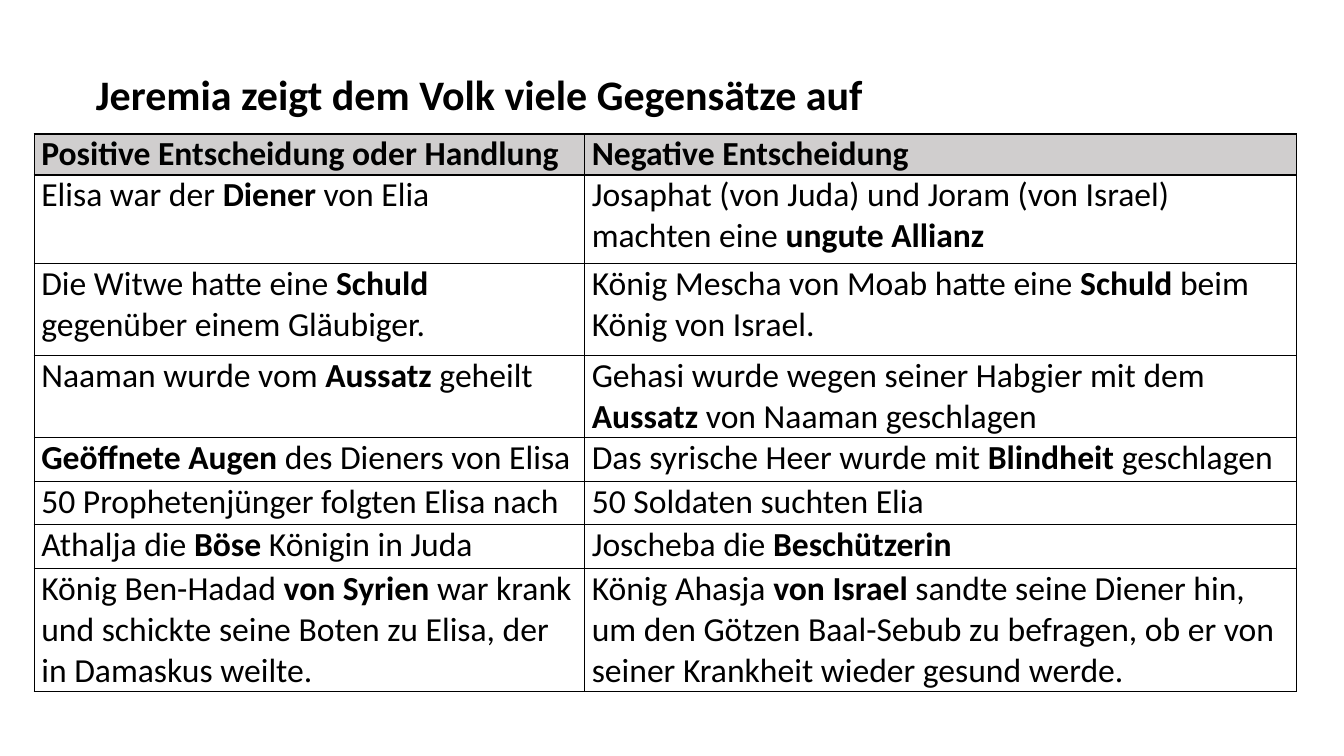
import pptx
import pptx.util
import pptx.dml.color
import pptx.enum.text
import pptx.oxml
import pptx.oxml.ns
from lxml import etree

Inches, Pt = pptx.util.Inches, pptx.util.Pt
COLORS = {"text": "000000", "border": "000000", "header": "D0CECE"}
FONT = "Calibri"
TITLE = "Jeremia zeigt dem Volk viele Gegensätze auf"
COLUMN_WIDTHS = [5.46, 7.06]
ROW_HEIGHTS = [0.34, 0.88, 0.91, 0.68, 0.44, 0.42, 0.44, 1.02]
# Asterisks enclose bold words.
ROWS = [
    ("*Positive Entscheidung oder Handlung*", "*Negative Entscheidung*"),
    ("Elisa war der *Diener* von Elia",
     "Josaphat (von Juda) und Joram (von Israel) machten eine *ungute Allianz*"),
    ("Die Witwe hatte eine *Schuld* gegenüber einem Gläubiger.",
     "König Mescha von Moab hatte eine *Schuld* beim König von Israel."),
    ("Naaman wurde vom *Aussatz* geheilt",
     "Gehasi wurde wegen seiner Habgier mit dem *Aussatz* von Naaman geschlagen"),
    ("*Geöffnete Augen* des Dieners von Elisa",
     "Das syrische Heer wurde mit *Blindheit* geschlagen"),
    ("50 Prophetenjünger folgten Elisa nach", "50 Soldaten suchten Elia"),
    ("Athalja die *Böse* Königin in Juda", "Joscheba die *Beschützerin*"),
    ("König Ben-Hadad *von Syrien *war krank und schickte seine Boten zu Elisa, "
     "der in Damaskus weilte.",
     "König Ahasja *von Israel *sandte seine Diener hin, um den Götzen Baal-Sebub "
     "zu befragen, ob er von seiner Krankheit wieder gesund werde."),
]


def color(name):
    return pptx.dml.color.RGBColor.from_string(COLORS[name])


def set_font(paragraph, size):
    font = paragraph.font
    font.name, font.size = FONT, Pt(size)
    font.color.rgb = color("text")


def add_borders(cell):
    properties = cell._tc.get_or_add_tcPr()
    for index, side in enumerate(("lnL", "lnR", "lnT", "lnB")):
        line = etree.Element(pptx.oxml.ns.qn(f"a:{side}"), w=str(Pt(1)))
        fill = etree.SubElement(line, pptx.oxml.ns.qn("a:solidFill"))
        etree.SubElement(fill, pptx.oxml.ns.qn("a:srgbClr"), val=COLORS["border"])
        properties.insert(index, line)


def fill_cell(cell, marked_text, is_header):
    cell.margin_left = cell.margin_right = Inches(0.07)
    cell.margin_top = cell.margin_bottom = 0
    if is_header:
        cell.fill.solid()
        cell.fill.fore_color.rgb = color("header")
    else:
        cell.fill.background()
    add_borders(cell)
    paragraph = cell.text_frame.paragraphs[0]
    set_font(paragraph, 24)
    for index, part in enumerate(marked_text.split("*")):
        if part:
            run = paragraph.add_run()
            run.text = part
            run.font.bold = index % 2 == 1


def place_title(slide, left, top, width, height):
    title = slide.shapes.title
    title.left, title.top, title.width, title.height = map(Inches, (left, top, width, height))
    frame = title.text_frame
    frame.text = TITLE
    frame.word_wrap = True
    frame.auto_size = pptx.enum.text.MSO_AUTO_SIZE.NONE
    frame.vertical_anchor = pptx.enum.text.MSO_ANCHOR.TOP
    paragraph = frame.paragraphs[0]
    paragraph.alignment = pptx.enum.text.PP_ALIGN.LEFT
    paragraph.line_spacing = 1.07
    paragraph.space_before = Pt(12)
    set_font(paragraph, 30)
    paragraph.font.bold = True


def add_contrast_table(slide, left, top):
    table = slide.shapes.add_table(
        len(ROWS), len(COLUMN_WIDTHS), Inches(left), Inches(top),
        Inches(sum(COLUMN_WIDTHS)), Inches(sum(ROW_HEIGHTS))).table
    table.first_row = table.horz_banding = False
    for column, width in zip(table.columns, COLUMN_WIDTHS):
        column.width = Inches(width)
    for row_index, (row, height, texts) in enumerate(zip(table.rows, ROW_HEIGHTS, ROWS)):
        row.height = Inches(height)
        for cell, text in zip(row.cells, texts):
            fill_cell(cell, text, row_index == 0)


def main():
    presentation = pptx.Presentation()
    presentation.slide_width = Inches(13.33)
    presentation.slide_height = Inches(7.5)
    slide = presentation.slides.add_slide(presentation.slide_layouts.get_by_name("Title Only"))
    place_title(slide, 0.85, 0.59, 11.05, 0.62)
    add_contrast_table(slide, 0.34, 1.33)
    presentation.save("out.pptx")


if __name__ == "__main__":
    main()
